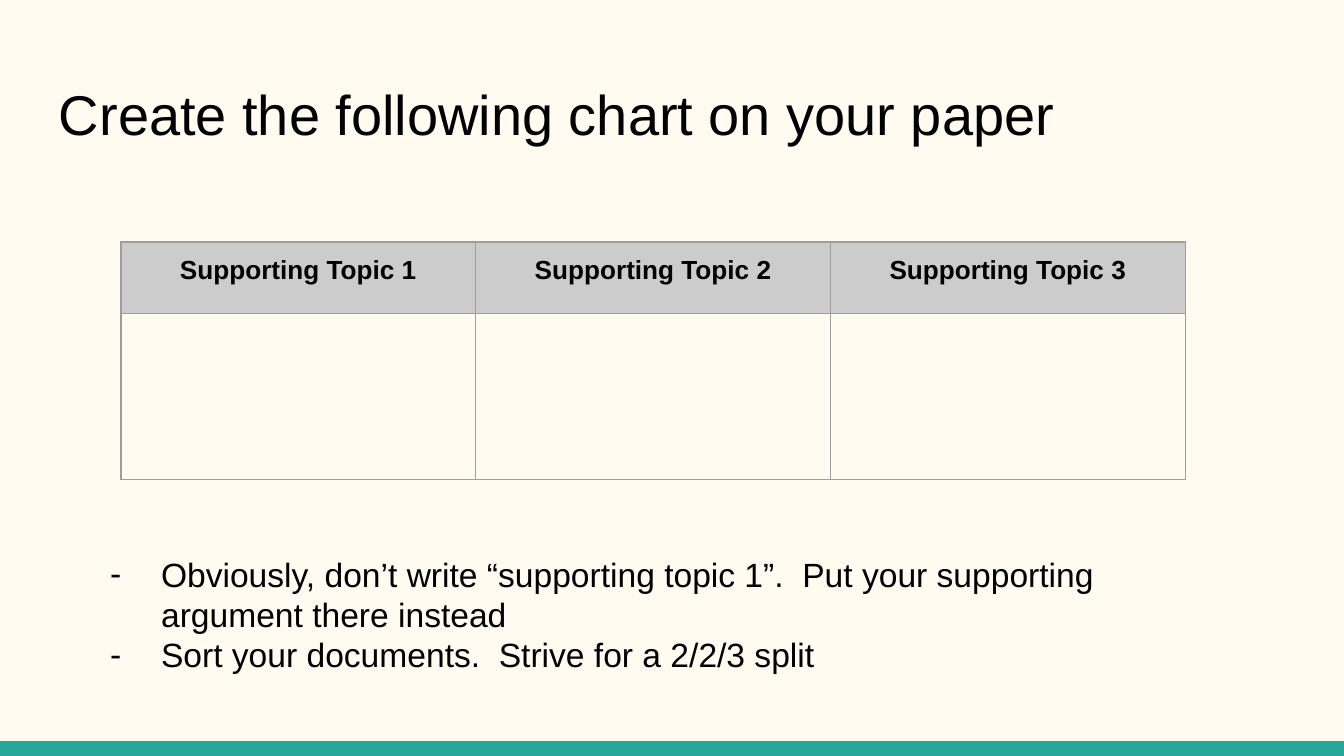
from dataclasses import dataclass

from lxml import etree
from pptx import Presentation
from pptx.dml.color import RGBColor
from pptx.enum.shapes import MSO_SHAPE
from pptx.enum.text import PP_ALIGN
from pptx.oxml.ns import qn
from pptx.util import Inches, Pt

RECTANGLE = MSO_SHAPE.RECTANGLE
CENTER = PP_ALIGN.CENTER
FONT = "Arial"
COLORS = {
    "page": "FFFBF0",
    "bar": "26A69A",
    "text": "000000",
    "header": "CCCCCC",
    "border": "9E9E9E",
}
PAGE_WIDTH = 10
PAGE_HEIGHT = PAGE_WIDTH * 9 / 16
BAR_HEIGHT = 0.11
INSET = 0.1
BORDER_WIDTH = 0.75
COLUMN_WIDTH = 2.64
ROW_HEIGHTS = (0.53, 1.24)
TOPICS = [f"Supporting Topic {number}" for number in (1, 2, 3)]


@dataclass
class TextBlock:
    left: float
    top: float
    width: float
    height: float
    lines: list[str]
    size: float
    bulleted: bool = False


TITLE = TextBlock(0.34, 0.49, 9.32, 0.67,
                  ["Create the following chart on your paper"], 30)
INSTRUCTIONS = TextBlock(
    0.6, 4.02, 8.68, 0.88,
    ["Obviously, don’t write “supporting topic 1”.  "
     "Put your supporting argument there instead",
     "Sort your documents.  Strive for a 2/2/3 split"],
    18, bulleted=True)


def color(name: str) -> RGBColor:
    return RGBColor.from_string(COLORS[name])


def set_margins(target) -> None:
    """Set equal insets on a text frame or a table cell."""
    target.margin_left = target.margin_right = Inches(INSET)
    target.margin_top = target.margin_bottom = Inches(INSET)


def style_runs(para, size: float, bold: bool = False) -> None:
    for span in para.runs:
        span.font.name = FONT
        span.font.size = Pt(size)
        span.font.bold = bold
        span.font.color.rgb = color("text")


def add_dash(para) -> None:
    """Give the paragraph a hanging dash bullet."""
    properties = para._p.get_or_add_pPr()
    properties.set("marL", str(Inches(0.5)))
    properties.set("indent", str(Inches(-0.38)))
    bullet_color = etree.SubElement(properties, qn("a:buClr"))
    etree.SubElement(bullet_color, qn("a:srgbClr"), val=COLORS["text"])
    etree.SubElement(properties, qn("a:buFont"), typeface=FONT)
    etree.SubElement(properties, qn("a:buChar"), char="-")


def add_text(page, block: TextBlock) -> None:
    box = page.shapes.add_textbox(Inches(block.left), Inches(block.top),
                                  Inches(block.width), Inches(block.height))
    frame = box.text_frame
    frame.word_wrap = True
    set_margins(frame)
    frame.text = "\n".join(block.lines)
    for para in frame.paragraphs:
        style_runs(para, block.size)
        if block.bulleted:
            add_dash(para)


def add_borders(cell) -> None:
    properties = cell._tc.get_or_add_tcPr()
    for side in ("lnL", "lnR", "lnT", "lnB"):
        line = etree.SubElement(properties, qn(f"a:{side}"),
                                w=str(Pt(BORDER_WIDTH)))
        fill = etree.SubElement(line, qn("a:solidFill"))
        etree.SubElement(fill, qn("a:srgbClr"), val=COLORS["border"])


def add_topic_table(page) -> None:
    table = page.shapes.add_table(
        len(ROW_HEIGHTS), len(TOPICS), Inches(0.9), Inches(1.8),
        Inches(COLUMN_WIDTH * len(TOPICS)), Inches(sum(ROW_HEIGHTS))).table
    table.first_row = table.horz_banding = False
    for column in table.columns:
        column.width = Inches(COLUMN_WIDTH)
    for row, height in zip(table.rows, ROW_HEIGHTS):
        row.height = Inches(height)
    for cell in table.iter_cells():
        set_margins(cell)
        add_borders(cell)
        cell.fill.background()
    for cell, topic in zip(table.rows[0].cells, TOPICS):
        cell.fill.solid()
        cell.fill.fore_color.rgb = color("header")
        cell.text_frame.text = topic
        para = cell.text_frame.paragraphs[0]
        para.alignment = CENTER
        style_runs(para, 14, bold=True)


def add_bottom_bar(page) -> None:
    bar = page.shapes.add_shape(
        RECTANGLE, Inches(0), Inches(PAGE_HEIGHT - BAR_HEIGHT),
        Inches(PAGE_WIDTH), Inches(BAR_HEIGHT))
    bar.shadow.inherit = False
    bar.fill.solid()
    bar.fill.fore_color.rgb = color("bar")
    bar.line.fill.background()


def main() -> None:
    deck = Presentation()
    deck.slide_width = Inches(PAGE_WIDTH)
    deck.slide_height = Inches(PAGE_HEIGHT)
    page = deck.slides.add_slide(deck.slide_layouts[6])
    page.background.fill.solid()
    page.background.fill.fore_color.rgb = color("page")

    # Bar, title, table and instructions, from back to front
    add_bottom_bar(page)
    add_text(page, TITLE)
    add_topic_table(page)
    add_text(page, INSTRUCTIONS)
    deck.save("out.pptx")


if __name__ == "__main__":
    main()
